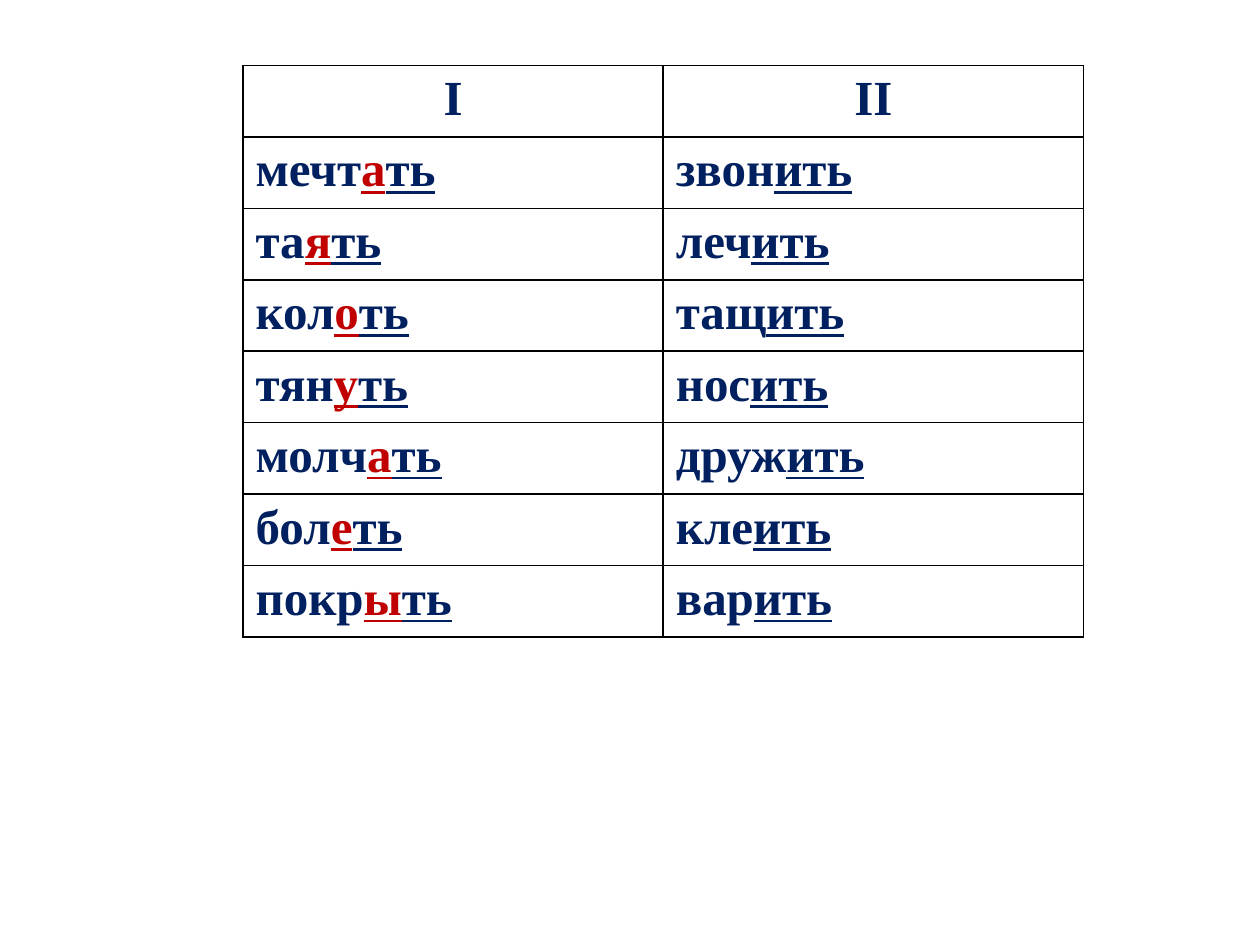
from dataclasses import dataclass

from lxml.etree import SubElement
from pptx import Presentation
from pptx.dml.color import RGBColor
from pptx.enum.text import PP_ALIGN as Align
from pptx.oxml.ns import qn
from pptx.util import Cm, Pt

COLORS = {"text": "002060", "vowel": "C00000", "border": "000000"}
FONT = "Times New Roman"
LEFT, TOP = Cm(4.9), Cm(1.32)
COLUMN_WIDTH, ROW_HEIGHT = Cm(8.47), Cm(1.44)


@dataclass(frozen=True)
class Verb:
    stem: str
    vowel: str = ""
    ending: str = "ть"


HEADINGS = ("I", "II")
VERB_PAIRS = (
    (Verb("мечт", "а"), Verb("звон", ending="ить")),
    (Verb("та", "я"), Verb("леч", ending="ить")),
    (Verb("кол", "о"), Verb("тащ", ending="ить")),
    (Verb("тян", "у"), Verb("нос", ending="ить")),
    (Verb("молч", "а"), Verb("друж", ending="ить")),
    (Verb("бол", "е"), Verb("кле", ending="ить")),
    (Verb("покр", "ы"), Verb("вар", ending="ить")),
)


def add_span(para, text: str, color: str = "text", underline: bool = False) -> None:
    span = para.add_run()
    span.text = text
    span.font.name = FONT
    span.font.size = Pt(28)
    span.font.bold = True
    span.font.underline = underline
    span.font.color.rgb = RGBColor.from_string(COLORS[color])


def add_verb(para, verb: Verb) -> None:
    add_span(para, verb.stem)
    if verb.vowel:
        add_span(para, verb.vowel, "vowel", underline=True)
    add_span(para, verb.ending, underline=True)


def style_cell(cell) -> None:
    """Give the cell thin borders on all sides and no fill."""
    properties = cell._tc.get_or_add_tcPr()
    for side in ("lnL", "lnR", "lnT", "lnB"):
        line = SubElement(properties, qn(f"a:{side}"), w=str(Pt(1)))
        fill = SubElement(line, qn("a:solidFill"))
        SubElement(fill, qn("a:srgbClr"), val=COLORS["border"])
    cell.fill.background()


def add_verb_table(page) -> None:
    row_count, column_count = len(VERB_PAIRS) + 1, len(HEADINGS)
    table = page.shapes.add_table(
        row_count, column_count, LEFT, TOP,
        COLUMN_WIDTH * column_count, ROW_HEIGHT * row_count,
    ).table
    table.first_row = table.horz_banding = False
    for cell in table.iter_cells():
        style_cell(cell)

    for column, heading in enumerate(HEADINGS):
        para = table.cell(0, column).text_frame.paragraphs[0]
        para.alignment = Align.CENTER
        add_span(para, heading)
    for row, pair in enumerate(VERB_PAIRS, start=1):
        for column, verb in enumerate(pair):
            add_verb(table.cell(row, column).text_frame.paragraphs[0], verb)


def main() -> None:
    deck = Presentation()
    deck.slide_width, deck.slide_height = Cm(25.4), Cm(19.05)
    page = deck.slides.add_slide(deck.slide_layouts[6])
    add_verb_table(page)
    deck.save("out.pptx")


if __name__ == "__main__":
    main()
